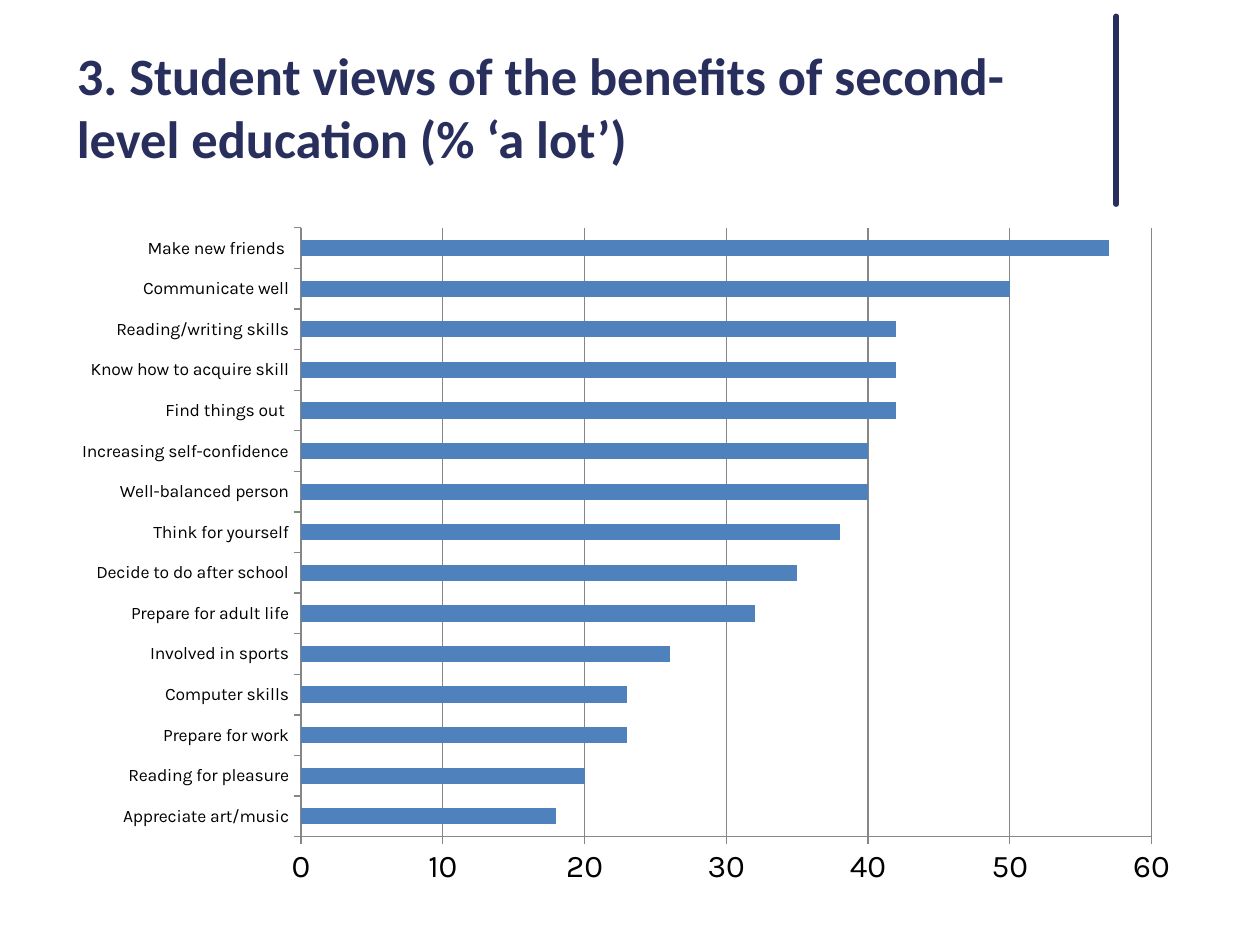
from lxml import etree
from pptx import Presentation
from pptx.chart.data import CategoryChartData
from pptx.dml.color import RGBColor
from pptx.enum.chart import XL_CHART_TYPE, XL_TICK_MARK
from pptx.enum.shapes import MSO_CONNECTOR
from pptx.enum.text import MSO_ANCHOR, MSO_AUTO_SIZE, PP_ALIGN
from pptx.oxml import parse_xml
from pptx.oxml.ns import nsdecls, qn
from pptx.util import Inches, Pt

TITLE = "3. Student views of the benefits of second-level education (% ‘a lot’)"
BENEFITS = [
    ("Appreciate art/music", 18),
    ("Reading for pleasure", 20),
    ("Prepare for work", 23),
    ("Computer skills", 23),
    ("Involved in sports", 26),
    ("Prepare for adult life", 32),
    ("Decide to do after school", 35),
    ("Think for yourself", 38),
    ("Well-balanced person", 40),
    ("Increasing self-confidence", 40),
    ("Find things out ", 42),
    ("Know how to acquire skill", 42),
    ("Reading/writing skills", 42),
    ("Communicate well", 50),
    ("Make new friends ", 57),
]
COLORS = {"navy": "292F5D", "bar": "4F81BD", "grid": "868686", "text": "000000"}
PLOT = {"x": 0.21, "y": 0.02, "w": 0.75, "h": 0.89}


def rgb(name):
    return RGBColor.from_string(COLORS[name])


def set_font(font, color, **values):
    for key, value in values.items():
        setattr(font, key, value)
    font.color.rgb = rgb(color)


def set_line(line, color, width):
    line.color.rgb = rgb(color)
    line.width = Pt(width)


def add_title(s):
    title = s.shapes.title
    box = {"left": 0.51, "top": 0.44, "width": 8.25, "height": 0.95}
    for key, value in box.items():
        setattr(title, key, Inches(value))
    tf = title.text_frame
    tf.text = TITLE
    frame = {"word_wrap": True, "auto_size": MSO_AUTO_SIZE.NONE,
             "vertical_anchor": MSO_ANCHOR.BOTTOM}
    for key, value in frame.items():
        setattr(tf, key, value)
    p = tf.paragraphs[0]
    p.alignment = PP_ALIGN.LEFT
    set_font(p.runs[0].font, "navy", name="Calibri", size=Pt(30), bold=True)


def add_rule(s):
    rule = s.shapes.add_connector(MSO_CONNECTOR.STRAIGHT, Inches(8.86), Inches(0.13),
                                  Inches(8.86), Inches(1.62))
    set_line(rule.line, "navy", 3.25)
    sp_pr = rule._element.spPr
    sp_pr.find(qn("a:ln")).set("cap", "rnd")
    etree.SubElement(sp_pr, qn("a:effectLst"))


def place_plot(chart):
    area = chart._chartSpace.chart.plotArea
    for old in area.findall(qn("c:layout")):
        area.remove(old)
    modes = "".join(f'<c:{k}Mode val="edge"/>' for k in "xy")
    sizes = "".join(f'<c:{k} val="{v}"/>' for k, v in PLOT.items())
    area.insert(0, parse_xml(
        f'<c:layout {nsdecls("c")}><c:manualLayout><c:layoutTarget val="inner"/>'
        f"{modes}{sizes}</c:manualLayout></c:layout>"))


def add_benefits_chart(s):
    data = CategoryChartData()
    data.categories = [name for name, _ in BENEFITS]
    data.add_series("Series 1", [value for _, value in BENEFITS])
    chart = s.shapes.add_chart(XL_CHART_TYPE.BAR_CLUSTERED, Inches(0.5), Inches(1.7),
                               Inches(9), Inches(5.43), data).chart
    chart.has_legend = chart.has_title = False
    set_font(chart.font, "text", name="Karla", size=Pt(18))
    plot = chart.plots[0]
    plot.gap_width = 150
    plot.vary_by_categories = False
    fill = plot.series[0].format.fill
    fill.solid()
    fill.fore_color.rgb = rgb("bar")
    for axis, size in ((chart.category_axis, 10), (chart.value_axis, 18)):
        axis.major_tick_mark = XL_TICK_MARK.OUTSIDE
        axis.minor_tick_mark = XL_TICK_MARK.NONE
        set_line(axis.format.line, "grid", 0.75)
        set_font(axis.tick_labels.font, "text", name="Karla", size=Pt(size))
    scale = {"minimum_scale": 0, "maximum_scale": 60, "major_unit": 10,
             "has_major_gridlines": True}
    for key, value in scale.items():
        setattr(chart.value_axis, key, value)
    set_line(chart.value_axis.major_gridlines.format.line, "grid", 0.75)
    place_plot(chart)


def main():
    """Build the slide on student views of second-level education."""
    prs = Presentation()
    prs.slide_width, prs.slide_height = Inches(10), Inches(7.5)
    s = prs.slides.add_slide(prs.slide_layouts[5])
    add_rule(s)
    add_title(s)
    add_benefits_chart(s)
    prs.save("out.pptx")


if __name__ == "__main__":
    main()
